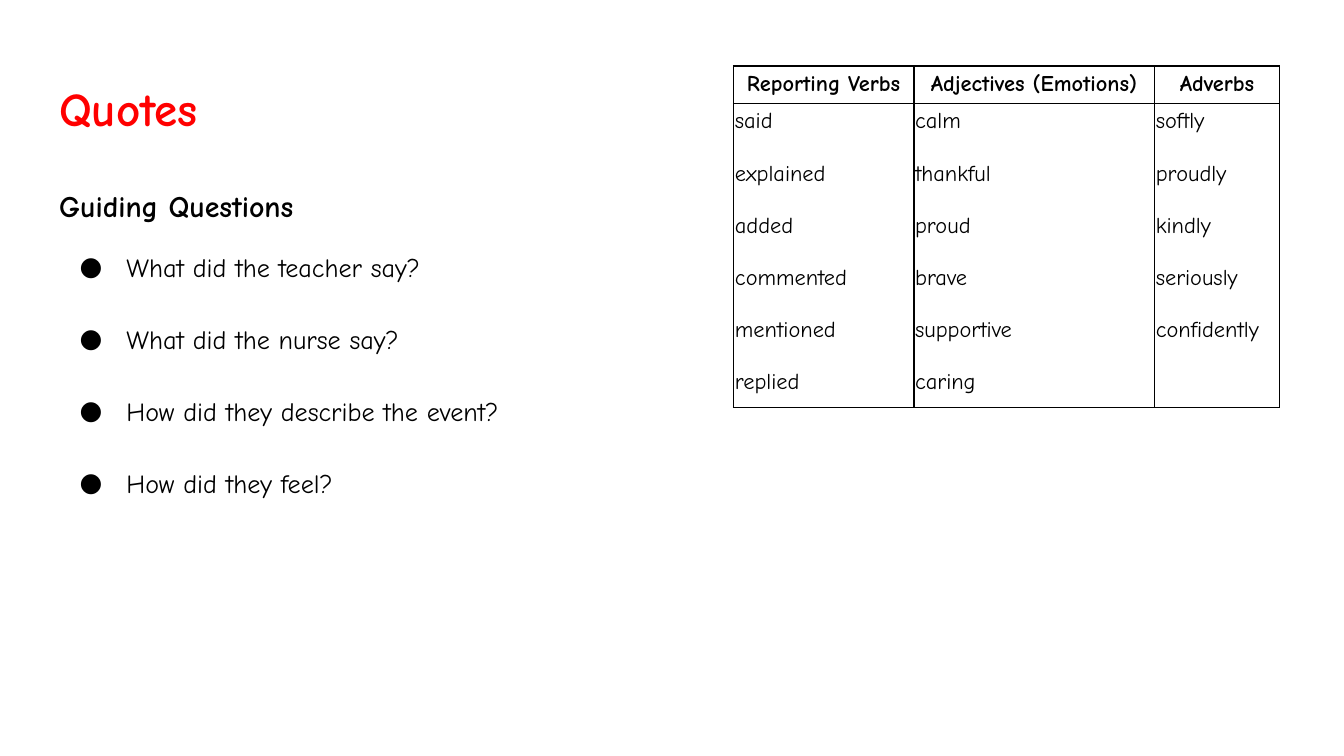
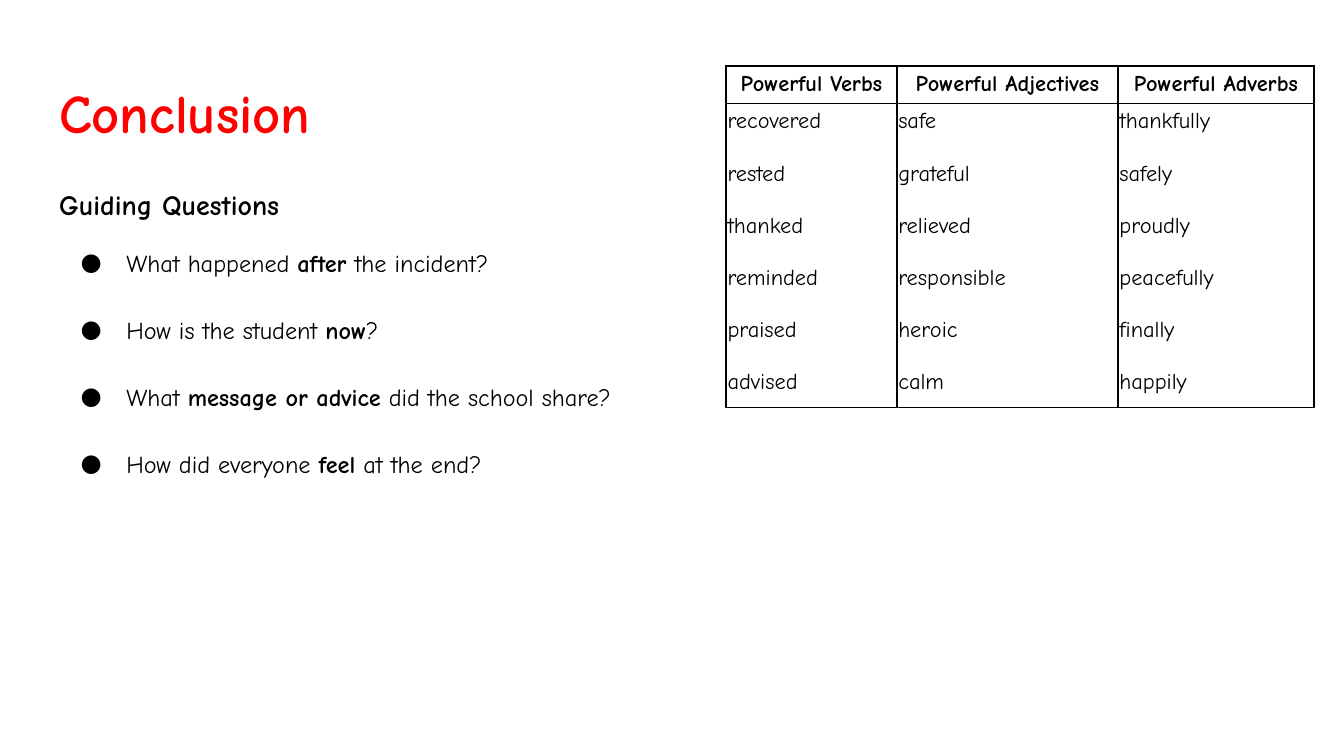
from dataclasses import dataclass

from lxml import etree
from pptx import Presentation
from pptx.dml import color
from pptx.enum import text
from pptx.oxml import ns
from pptx.util import Pt


@dataclass(frozen=True)
class TextScale:
    title: float
    heading: float
    bullet: float


@dataclass(frozen=True)
class Theme:
    font: str = "Comic Neue"
    ink: str = "000000"
    accent: str = "FF0000"
    word: float = 12
    line_spacing: float = 1.15
    border: float = 1
    large_text: TextScale = TextScale(25.2, 16, 14)
    large_title: TextScale = TextScale(29.2, 15, 13)


@dataclass(frozen=True)
class WordColumn:
    header: str
    width: float
    words: tuple[str, ...]


@dataclass(frozen=True)
class Lesson:
    title: str
    questions: tuple[str, ...]
    scale: TextScale
    body_width: float
    table_left: float
    columns: tuple[WordColumn, ...]


THEME = Theme()
LEFT, TOP = 24.5, 35.25
TITLE_WIDTH, TITLE_HEIGHT = 671, 45
BODY_TOP, BODY_HEIGHT = 90.75, 269
ROW_HEIGHTS = (20.25, 162.75)
TEXT_INSET, CELL_INSET = 7.2, 0.75
HEADING_BEFORE, SPACE_BEFORE = 14, 12
QUESTION_GAP = 1.38  # one line, as a multiple of the text size

LESSONS = (
    Lesson(
        "Quotes",
        ("What did the teacher say?", "What did the nurse say?",
         "How did they describe the event?", "How did they feel?"),
        THEME.large_text, 294.5, 393,
        (
            WordColumn("Reporting Verbs", 96.5,
                       ("said", "explained", "added", "commented", "mentioned", "replied")),
            WordColumn("Adjectives (Emotions)", 129,
                       ("calm", "thankful", "proud", "brave", "supportive", "caring")),
            WordColumn("Adverbs", 67,
                       ("softly", "proudly", "kindly", "seriously", "confidently")),
        ),
    ),
    Lesson(
        "Conclusion",
        ("What happened *after* the incident?", "How is the student *now*?",
         "What *message or advice* did the school share?",
         "How did everyone *feel* at the end?"),
        THEME.large_title, 364.5, 389,
        (
            WordColumn("Powerful Verbs", 91.5,
                       ("recovered", "rested", "thanked", "reminded", "praised", "advised")),
            WordColumn("Powerful Adjectives", 118.5,
                       ("safe", "grateful", "relieved", "responsible", "heroic", "calm")),
            WordColumn("Powerful Adverbs", 105,
                       ("thankfully", "safely", "proudly", "peacefully", "finally", "happily")),
        ),
    ),
)


def add_child(parent, tag: str, **attributes: str):
    return etree.SubElement(parent, ns.qn(tag), attributes)


def add_span(para, words: str, size: float, bold: bool = False,
             hue: str = THEME.ink) -> None:
    span = para.add_run()
    span.text = words
    span.font.name = THEME.font
    span.font.size = Pt(size)
    span.font.bold = bold
    span.font.color.rgb = color.RGBColor.from_string(hue)


def add_marked_text(para, words: str, size: float) -> None:
    """Write words, with the parts between asterisks in bold."""
    for index, part in enumerate(words.split("*")):
        add_span(para, part, size, bold=index % 2 == 1)


def next_paragraph(frame, first: bool, before: float,
                   align=text.PP_ALIGN.LEFT):
    para = frame.paragraphs[0] if first else frame.add_paragraph()
    para.alignment = align
    para.line_spacing = THEME.line_spacing
    para.space_before = Pt(before)
    para.space_after = Pt(0)
    return para


def set_bullet(para, size: float) -> None:
    properties = para._p.get_or_add_pPr()
    properties.set("marL", str(Pt(36)))
    properties.set("indent", str(-Pt(18 + size / 2)))
    add_child(add_child(properties, "a:buClr"), "a:srgbClr", val=THEME.ink)
    add_child(properties, "a:buFont", typeface=THEME.font)
    add_child(properties, "a:buChar", char="●")


def clear_bullet(para) -> None:
    properties = para._p.get_or_add_pPr()
    properties.set("marL", "0")
    properties.set("indent", "0")
    add_child(properties, "a:buNone")


def place(box, left: float, top: float, width: float, height: float):
    """Move a placeholder and return its text frame, set to the top left."""
    box.left, box.top, box.width, box.height = map(Pt, (left, top, width, height))
    frame = box.text_frame
    frame.word_wrap = True
    frame.auto_size = text.MSO_AUTO_SIZE.NONE
    frame.vertical_anchor = text.MSO_ANCHOR.TOP
    frame.margin_left = frame.margin_right = Pt(TEXT_INSET)
    frame.margin_top = frame.margin_bottom = Pt(TEXT_INSET)
    return frame


def draw_title(page, lesson: Lesson) -> None:
    frame = place(page.shapes.title, LEFT, TOP, TITLE_WIDTH, TITLE_HEIGHT)
    para = frame.paragraphs[0]
    para.alignment = text.PP_ALIGN.LEFT
    add_span(para, lesson.title, lesson.scale.title, True, THEME.accent)


def draw_questions(page, lesson: Lesson) -> None:
    frame = place(page.placeholders[1], LEFT, BODY_TOP, lesson.body_width, BODY_HEIGHT)
    heading = next_paragraph(frame, True, HEADING_BEFORE)
    clear_bullet(heading)
    add_span(heading, "Guiding Questions", lesson.scale.heading, True)
    size = lesson.scale.bullet
    for index, question in enumerate(lesson.questions):
        para = next_paragraph(frame, False, QUESTION_GAP * size if index else SPACE_BEFORE)
        set_bullet(para, size)
        add_marked_text(para, question, size)


def format_cell(cell) -> None:
    cell.margin_left = cell.margin_right = Pt(CELL_INSET)
    cell.margin_top = cell.margin_bottom = Pt(CELL_INSET)
    properties = cell._tc.get_or_add_tcPr()
    for side in ("a:lnL", "a:lnR", "a:lnT", "a:lnB"):
        line = add_child(properties, side, w=str(Pt(THEME.border)))
        add_child(add_child(line, "a:solidFill"), "a:srgbClr", val=THEME.ink)
    cell.fill.background()


def draw_word_table(page, lesson: Lesson) -> None:
    width = sum(column.width for column in lesson.columns)
    frame = page.shapes.add_table(
        len(ROW_HEIGHTS), len(lesson.columns), Pt(lesson.table_left), Pt(TOP),
        Pt(width), Pt(sum(ROW_HEIGHTS)))
    table = frame.table
    table.first_row = table.horz_banding = False
    for row, height in zip(table.rows, ROW_HEIGHTS):
        row.height = Pt(height)
    for index, column in enumerate(lesson.columns):
        table.columns[index].width = Pt(column.width)
        header, body = table.cell(0, index), table.cell(1, index)
        format_cell(header)
        format_cell(body)
        para = next_paragraph(header.text_frame, True, SPACE_BEFORE, text.PP_ALIGN.CENTER)
        add_span(para, column.header, THEME.word, True)
        for order, word in enumerate(column.words):
            para = next_paragraph(body.text_frame, order == 0, SPACE_BEFORE)
            add_span(para, word, THEME.word)


def main() -> None:
    deck = Presentation()
    deck.slide_width, deck.slide_height = Pt(720), Pt(405)
    for lesson in LESSONS:
        page = deck.slides.add_slide(deck.slide_layouts[1])
        draw_title(page, lesson)
        draw_questions(page, lesson)
        draw_word_table(page, lesson)
    deck.save("out.pptx")


if __name__ == "__main__":
    main()
